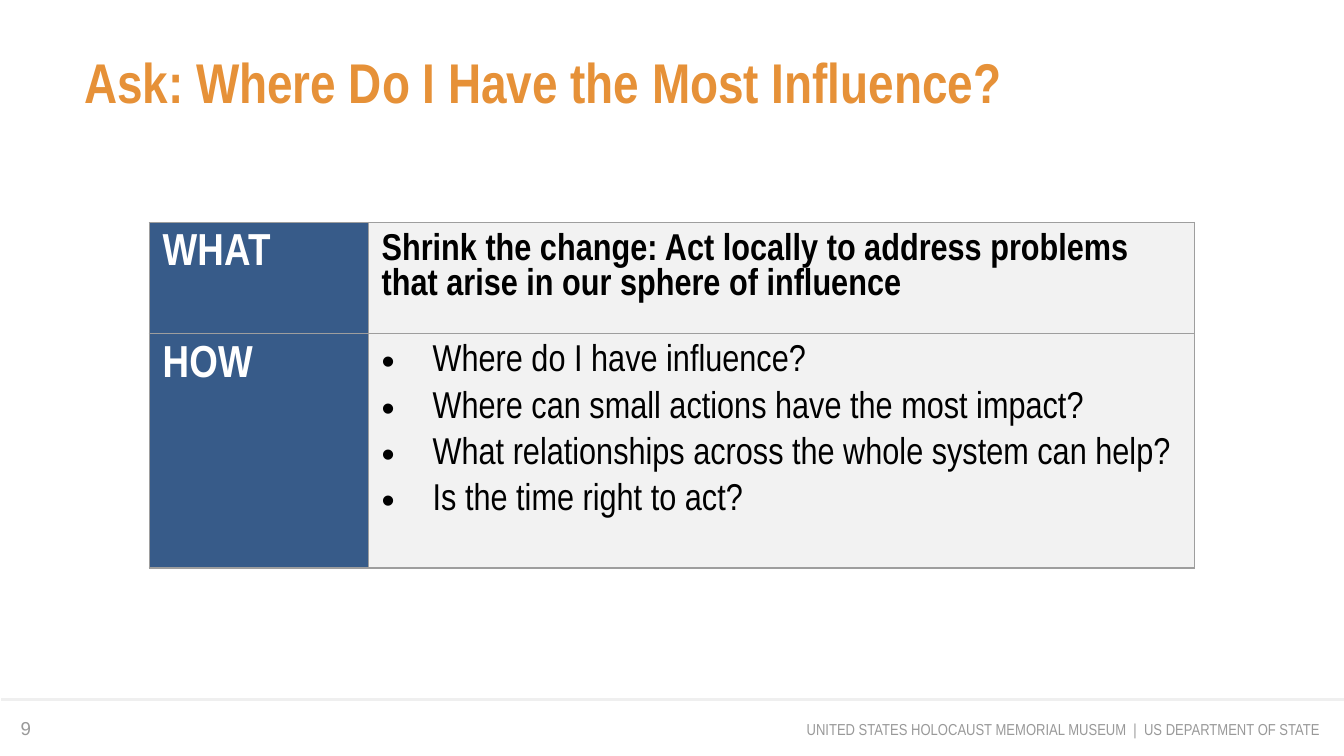
from dataclasses import dataclass

from lxml import etree
from pptx import Presentation
from pptx.dml.color import RGBColor
from pptx.enum.shapes import MSO_CONNECTOR
from pptx.enum.text import MSO_ANCHOR, PP_ALIGN
from pptx.oxml.ns import qn
from pptx.util import Emu, Pt

STRAIGHT = MSO_CONNECTOR.STRAIGHT
TOP, MIDDLE, BOTTOM = MSO_ANCHOR.TOP, MSO_ANCHOR.MIDDLE, MSO_ANCHOR.BOTTOM
LEFT, RIGHT = PP_ALIGN.LEFT, PP_ALIGN.RIGHT

EMU_PER_PX = 4572  # 200 px to the inch
SLIDE_WIDTH, SLIDE_HEIGHT = 2000, 1125
NARROW = "Arial Narrow"
ORANGE, BLUE, WHITE, BLACK = "E69138", "375B89", "FFFFFF", "000000"
PALE, RULE, GREY, BORDER = "F2F2F2", "EFEFEF", "999999", "9E9E9E"


@dataclass(frozen=True)
class Style:
    size: float
    color: str
    bold: bool = False
    font: str = NARROW
    spacing: int = 0  # hundredths of a point


@dataclass(frozen=True)
class Label:
    text: str
    box: tuple[int, int, int, int]
    style: Style
    inset: int = 20
    anchor: MSO_ANCHOR = TOP
    align: PP_ALIGN = LEFT


@dataclass(frozen=True)
class Cell:
    lines: tuple[str, ...]
    style: Style
    fill: str
    bulleted: bool = False


HEADING = Style(24, WHITE, bold=True, spacing=10)
SUMMARY = Style(20, BLACK, bold=True)
QUESTION = Style(20, BLACK)

LABELS = (
    Label("UNITED STATES HOLOCAUST MEMORIAL MUSEUM  |  US DEPARTMENT OF STATE",
          (1036, 1042, 948, 86), Style(8.5, GREY), anchor=MIDDLE, align=RIGHT),
    Label("Ask: Where Do I Have the Most Influence?",
          (125, 71, 1750, 108), Style(30, ORANGE, bold=True), inset=0),
    Label("9", (11, 1031, 156, 86), Style(10, GREY, font="Arial"), anchor=BOTTOM),
)

TABLE_LEFT, TABLE_TOP, TABLE_HEIGHT = 222, 331, 514
COLUMN_WIDTHS = (326, 1230)
ROW_HEIGHTS = (158, 284)
ROWS = (
    (Cell(("WHAT",), HEADING, BLUE),
     Cell(("Shrink the change: Act locally to address problems "
           "that arise in our sphere of influence",), SUMMARY, PALE)),
    (Cell(("HOW",), HEADING, BLUE),
     Cell(("Where do I have influence?",
           "Where can small actions have the most impact?",
           "What relationships across the whole system can help?",
           "Is the time right to act?"), QUESTION, PALE, bulleted=True)),
)


def px(value: int) -> Emu:
    return Emu(value * EMU_PER_PX)


def rgb(color: str) -> RGBColor:
    return RGBColor.from_string(color)


def add_run(paragraph, text: str, style: Style) -> None:
    run = paragraph.add_run()
    run.text = text
    run.font.size = Pt(style.size)
    run.font.name = style.font
    run.font.bold = style.bold
    run.font.color.rgb = rgb(style.color)
    if style.spacing:
        run.font._element.set("spc", str(style.spacing))


def set_insets(target, horizontal: int, vertical: int) -> None:
    target.margin_left = target.margin_right = px(horizontal)
    target.margin_top = target.margin_bottom = px(vertical)


def add_label(slide, label: Label) -> None:
    frame = slide.shapes.add_textbox(*map(px, label.box)).text_frame
    frame.word_wrap = True
    frame.vertical_anchor = label.anchor
    set_insets(frame, label.inset, label.inset)
    paragraph = frame.paragraphs[0]
    paragraph.alignment = label.align
    add_run(paragraph, label.text, label.style)


def add_rule(slide, left: int, right: int, top: int) -> None:
    rule = slide.shapes.add_connector(STRAIGHT, px(left), px(top), px(right), px(top))
    rule.line.color.rgb = rgb(RULE)
    rule.line.width = Pt(1.5)
    etree.SubElement(rule._element.spPr, qn("a:effectLst"))


def add_bullet(paragraph, color: str) -> None:
    paragraph.space_after = Pt(6)
    properties = paragraph._p.get_or_add_pPr()
    properties.set("marL", str(px(76)))
    properties.set("indent", str(px(-76)))
    bullet_color = etree.SubElement(properties, qn("a:buClr"))
    etree.SubElement(bullet_color, qn("a:srgbClr"), val=color)
    etree.SubElement(properties, qn("a:buFont"), typeface="Arial")
    etree.SubElement(properties, qn("a:buChar"), char="•")


def add_borders(table_cell) -> None:
    properties = table_cell._tc.get_or_add_tcPr()
    for side in ("lnL", "lnR", "lnT", "lnB"):
        line = etree.SubElement(properties, qn(f"a:{side}"), w=str(Pt(0.75)))
        fill = etree.SubElement(line, qn("a:solidFill"))
        etree.SubElement(fill, qn("a:srgbClr"), val=BORDER)


def fill_cell(table_cell, cell: Cell) -> None:
    set_insets(table_cell, 20, 16)
    add_borders(table_cell)
    table_cell.fill.solid()
    table_cell.fill.fore_color.rgb = rgb(cell.fill)
    frame = table_cell.text_frame
    for index, text in enumerate(cell.lines):
        paragraph = frame.add_paragraph() if index else frame.paragraphs[0]
        if cell.bulleted:
            add_bullet(paragraph, cell.style.color)
        add_run(paragraph, text, cell.style)


def add_what_how_table(slide) -> None:
    graphic_frame = slide.shapes.add_table(
        len(ROW_HEIGHTS), len(COLUMN_WIDTHS), px(TABLE_LEFT), px(TABLE_TOP),
        px(sum(COLUMN_WIDTHS)), px(TABLE_HEIGHT))
    table = graphic_frame.table
    for column, width in zip(table.columns, COLUMN_WIDTHS):
        column.width = px(width)
    for row, height, cells in zip(table.rows, ROW_HEIGHTS, ROWS):
        row.height = px(height)
        for table_cell, cell in zip(row.cells, cells):
            fill_cell(table_cell, cell)
    # Row heights reset the frame, which leaves room for the text to grow
    graphic_frame.height = px(TABLE_HEIGHT)


def main() -> None:
    presentation = Presentation()
    presentation.slide_width = px(SLIDE_WIDTH)
    presentation.slide_height = px(SLIDE_HEIGHT)
    slide = presentation.slides.add_slide(presentation.slide_layouts[6])

    # Footer rule, then title, footer and page number
    add_rule(slide, 2, SLIDE_WIDTH, 1041)
    for label in LABELS:
        add_label(slide, label)

    # What and how
    add_what_how_table(slide)
    presentation.save("out.pptx")


if __name__ == "__main__":
    main()
